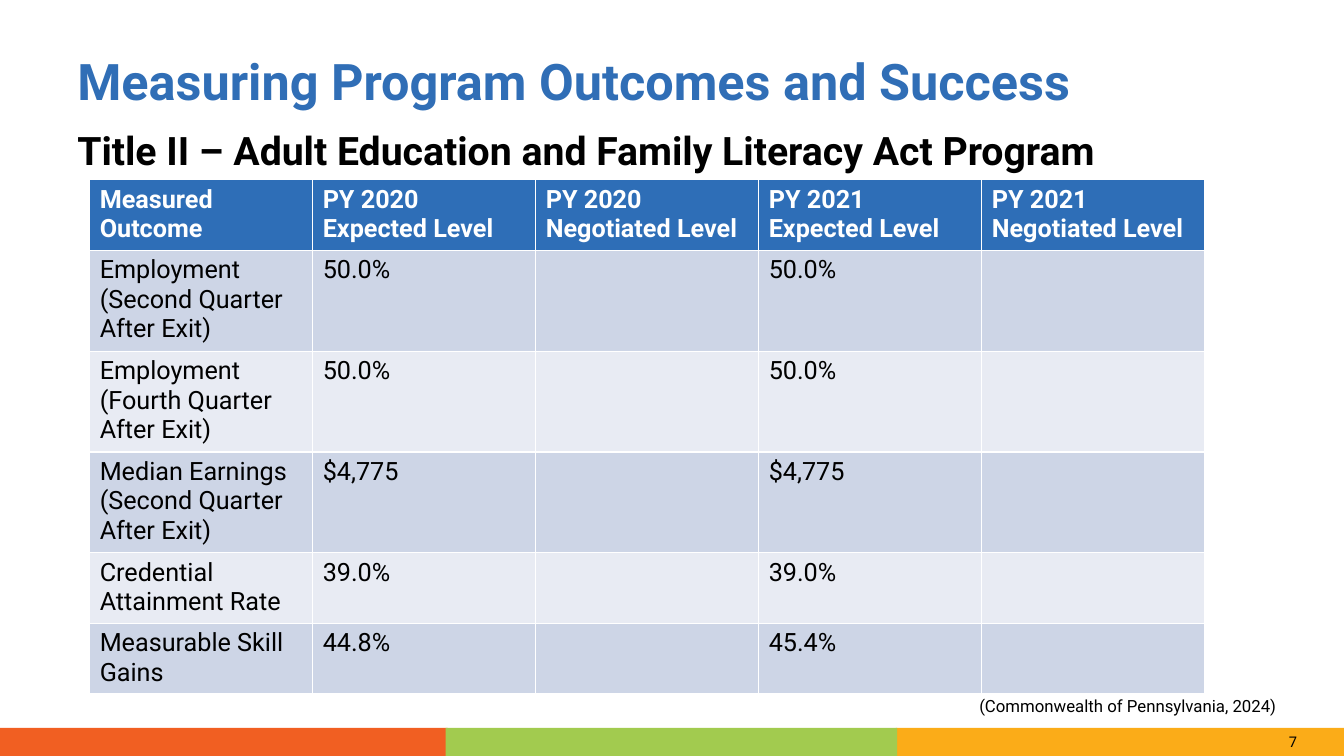
from dataclasses import dataclass

import pptx
import pptx.dml.color
import pptx.enum.shapes
import pptx.enum.text
import pptx.presentation
import pptx.slide
import pptx.table
import pptx.text.text
import pptx.util
from pptx.util import Cm

FONT = "Roboto"
BLACK = "000000"
WHITE = "FFFFFF"
HEADER_FILL = "2E6EB7"
BAND_FILLS = ("CDD5E6", "E8EBF3")
FOOTER_TOP, FOOTER_HEIGHT = 18.34, 0.71
COLUMN_WIDTH = 5.62


@dataclass(frozen=True)
class FooterBar:
    left: float
    width: float
    color: str


@dataclass(frozen=True)
class Label:
    text: str
    left: float
    top: float
    width: float
    height: float
    size: float
    color: str = BLACK
    bold: bool = False
    middle: bool = False
    line_spacing: float = 1.0


@dataclass(frozen=True)
class Outcome:
    name: str
    expected_2020: str
    expected_2021: str
    row_height: float

    def cells(self) -> tuple[str, ...]:
        """Row texts; the negotiated levels are still open."""
        return (self.name, self.expected_2020, "", self.expected_2021, "")


FOOTER_BARS = (
    FooterBar(22.58, 11.29, "FBAC18"),
    FooterBar(0, 11.28, "F15F22"),
    FooterBar(11.23, 11.38, "A2CB4F"),
)

LABELS = (
    Label("Measuring Program Outcomes and Success", 1.7, 1.19, 30.5, 1.88, 36,
          "306EB6", bold=True, middle=True, line_spacing=0.9),
    Label("Title II – Adult Education and Family Literacy Act Program",
          1.7, 3.05, 26.4, 1.45, 28, bold=True),
    Label("(Commonwealth of Pennsylvania, 2024)", 24.43, 17.4, 8.71, 0.76, 12),
    Label("7", 32.23, FOOTER_TOP, 0.97, FOOTER_HEIGHT, 10.5),
)

HEADER = (
    "Measured Outcome",
    "PY 2020 Expected Level",
    "PY 2020 Negotiated Level",
    "PY 2021 Expected Level",
    "PY 2021 Negotiated Level",
)
HEADER_HEIGHT = 1.78

OUTCOMES = (
    Outcome("Employment (Second Quarter After Exit)", "50.0%", "50.0%", 2.54),
    Outcome("Employment (Fourth Quarter After Exit)", "50.0%", "50.0%", 2.54),
    Outcome("Median Earnings (Second Quarter After Exit)", "$4,775", "$4,775", 2.54),
    Outcome("Credential Attainment Rate", "39.0%", "39.0%", 1.78),
    Outcome("Measurable Skill Gains", "44.8%", "45.4%", 1.78),
)


def rgb(color: str) -> pptx.dml.color.RGBColor:
    return pptx.dml.color.RGBColor.from_string(color)


def style_paragraph(paragraph: pptx.text.text._Paragraph, size: float,
                    color: str, bold: bool) -> None:
    font = paragraph.font
    font.name = FONT
    font.size = pptx.util.Pt(size)
    font.bold = bold
    font.color.rgb = rgb(color)


def add_footer_bar(slide: pptx.slide.Slide, bar: FooterBar) -> None:
    shape = slide.shapes.add_shape(
        pptx.enum.shapes.MSO_SHAPE.RECTANGLE,
        Cm(bar.left), Cm(FOOTER_TOP), Cm(bar.width), Cm(FOOTER_HEIGHT))
    shape.shadow.inherit = False
    shape.fill.solid()
    shape.fill.fore_color.rgb = rgb(bar.color)
    shape.line.fill.background()


def add_label(slide: pptx.slide.Slide, label: Label) -> None:
    text_box = slide.shapes.add_textbox(
        Cm(label.left), Cm(label.top), Cm(label.width), Cm(label.height))
    text_frame = text_box.text_frame
    text_frame.word_wrap = True
    anchors = pptx.enum.text.MSO_ANCHOR
    text_frame.vertical_anchor = anchors.MIDDLE if label.middle else anchors.TOP
    paragraph = text_frame.paragraphs[0]
    paragraph.text = label.text
    paragraph.line_spacing = label.line_spacing
    style_paragraph(paragraph, label.size, label.color, label.bold)


def fill_row(table: pptx.table.Table, row: int, texts: tuple[str, ...],
             height: float, fill: str, color: str, bold: bool) -> None:
    table.rows[row].height = Cm(height)
    for cell, text in zip(table.rows[row].cells, texts):
        cell.fill.solid()
        cell.fill.fore_color.rgb = rgb(fill)
        cell.text = text
        style_paragraph(cell.text_frame.paragraphs[0], 18, color, bold)


def add_outcome_table(slide: pptx.slide.Slide) -> None:
    height = HEADER_HEIGHT + sum(outcome.row_height for outcome in OUTCOMES)
    table = slide.shapes.add_table(
        len(OUTCOMES) + 1, len(HEADER), Cm(2.26), Cm(4.53),
        Cm(COLUMN_WIDTH * len(HEADER)), Cm(height)).table
    for column in table.columns:
        column.width = Cm(COLUMN_WIDTH)
    fill_row(table, 0, HEADER, HEADER_HEIGHT, HEADER_FILL, WHITE, True)
    for index, outcome in enumerate(OUTCOMES):
        fill_row(table, index + 1, outcome.cells(), outcome.row_height,
                 BAND_FILLS[index % 2], BLACK, False)


def main() -> None:
    presentation = pptx.Presentation()
    presentation.slide_width = Cm(33.87)
    presentation.slide_height = Cm(19.05)
    slide = presentation.slides.add_slide(presentation.slide_layouts[6])
    for bar in FOOTER_BARS:
        add_footer_bar(slide, bar)
    add_outcome_table(slide)
    for label in LABELS:
        add_label(slide, label)
    presentation.save("out.pptx")


if __name__ == "__main__":
    main()
